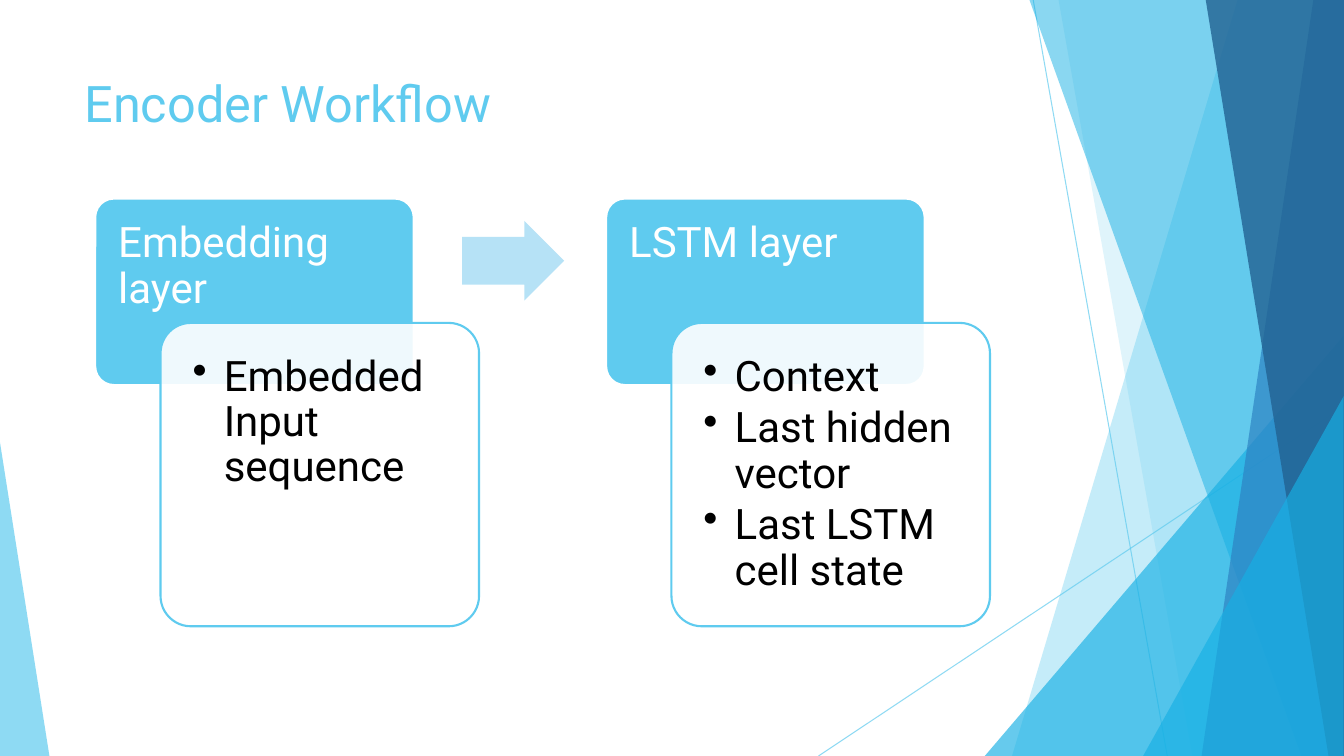
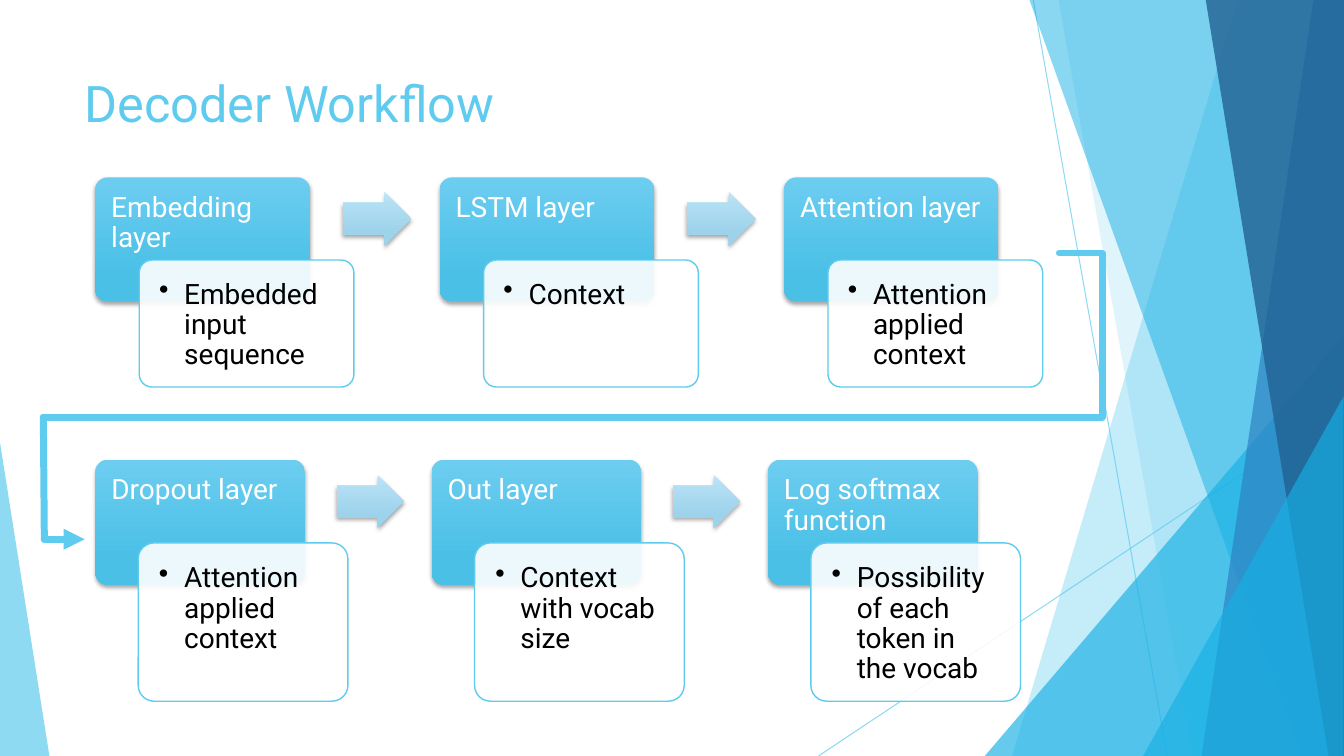
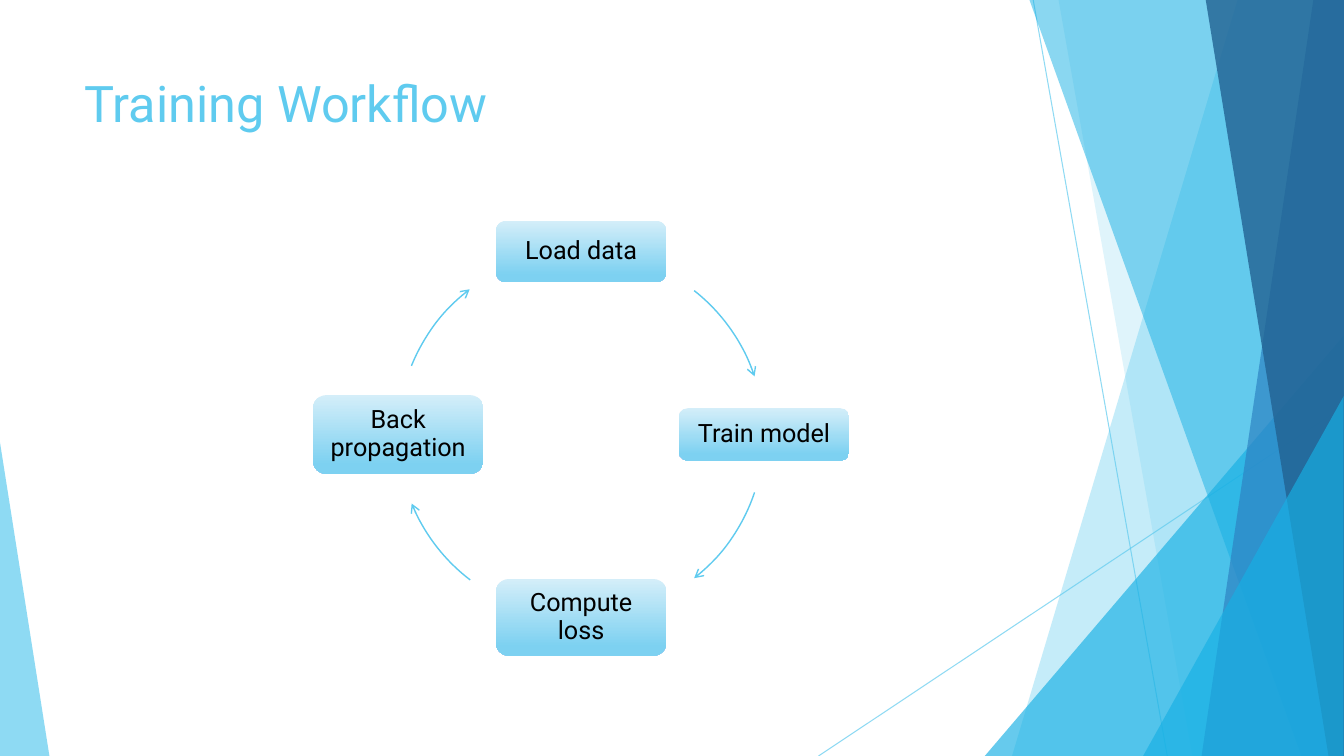
from dataclasses import dataclass
from math import cos, radians, sin

from lxml.etree import SubElement as Sub
from pptx import Presentation
from pptx.dml.color import RGBColor as Rgb
from pptx.enum.shapes import MSO_CONNECTOR as Link, MSO_SHAPE as Form
from pptx.enum.text import MSO_ANCHOR as Anchor, PP_ALIGN as Align
from pptx.oxml.ns import qn
from pptx.shapes.autoshape import Shape
from pptx.shapes.connector import Connector
from pptx.slide import Slide
from pptx.text.text import TextFrame
from pptx.util import Emu, Inches, Pt

CELL = Inches(0.1)
WIDE, HIGH = 133.33, 75
FONT = "Roboto"
HUES = {
    "sky": "5FCBEF", "cyan": "17B0E4", "blue": "2E83C3", "navy": "226292",
    "white": "FFFFFF", "black": "000000", "pale": "B6E2F6",
    "head top": "6CCDF0", "head low": "4BC0E6",
    "arrow top": "BAE3F6", "arrow low": "9DD2EB",
    "step top": "D4EEF9", "step low": "7DD1F1",
}


@dataclass
class Band:
    top: tuple[float, float]
    low: tuple[float, float]
    hue: str
    alpha: int


@dataclass
class Wedge:
    left: float
    top: float
    wide: float
    tip: int
    hue: str
    alpha: int


@dataclass
class Card:
    head: str
    items: list[str]


@dataclass
class Row:
    cards: list[Card]
    top: float
    wide: float
    head: float
    body: float
    size: int
    pad: float
    dent: float
    edge: float
    glossy: bool


@dataclass
class Step:
    text: str
    turn: int
    high: float
    start: float
    end: float


DECOR = [
    Band((122.8, WIDE), (100.4, WIDE), "sky", 36),
    Band((105, WIDE), (118.3, WIDE), "sky", 20),
    Wedge(97.7, 33.3, 35.6, 1, "cyan", 66),
    Band((102.1, WIDE), (129.1, WIDE), "cyan", 50),
    Band((130.3, WIDE), (119.2, WIDE), "blue", 70),
    Band((119.6, WIDE), (131.8, WIDE), "navy", 80),
    Wedge(113.4, 39.3, 19.9, 1, "cyan", 66),
    Wedge(0, 43.9, 4.9, 0, "sky", 70),
]
RAYS = [(102.5, 0, 115.8, HIGH), (WIDE, 40.3, 81.2, HIGH)]

ENCODER = [Row([
    Card("Embedding layer", ["Embedded Input sequence"]),
    Card("LSTM layer", ["Context", "Last hidden vector", "Last LSTM cell state"]),
], 19.7, 31.6, 18.5, 30.1, 30, 2.3, 3.1, 1.5, False)]
DECODER = [
    Row([
        Card("Embedding layer", ["Embedded input sequence"]),
        Card("LSTM layer", ["Context"]),
        Card("Attention layer", ["Attention applied context"]),
    ], 17.6, 21.3, 12.3, 12.6, 20, 1.6, 2.5, 1, True),
    Row([
        Card("Dropout layer", ["Attention applied context"]),
        Card("Out layer", ["Context with vocab size"]),
        Card("Log softmax function", ["Possibility of each token in the vocab"]),
    ], 45.6, 20.8, 12.4, 15.7, 20, 1.6, 2.5, 1, True),
]
STEPS = [
    Step("Load data", 270, 6.1, 308.2, 341.5),
    Step("Train model", 0, 5.2, 18.5, 51.8),
    Step("Compute loss", 90, 7.6, 127.3, 157.8),
    Step("Back propagation", 180, 7.8, 202, 232.5),
]


def cell(num: float) -> Emu:
    return Emu(round(num * CELL))


def tint(name: str) -> Rgb:
    return Rgb.from_string(HUES[name])


def fade(item: Shape | Connector, alpha: int) -> None:
    hue = next(item._element.spPr.iter(qn("a:srgbClr")))
    Sub(hue, qn("a:alpha"), val=str(alpha * 1000))


def point(item: Shape | Connector, kind: str) -> None:
    Sub(item._element.spPr.find(qn("a:ln")), qn("a:tailEnd"), type=kind)


def ink(item: Shape | Connector, width: float, hue: str = "sky") -> None:
    item.line.color.rgb = tint(hue)
    item.line.width = Pt(width)


def shape(slide: Slide, form: Form, left: float, top: float, wide: float,
          high: float, hue: str = "") -> Shape:
    item = slide.shapes.add_shape(form, cell(left), cell(top), cell(wide), cell(high))
    item.shadow.inherit = False
    item.line.fill.background()
    if hue:
        item.fill.solid()
        item.fill.fore_color.rgb = tint(hue)
    else:
        item.fill.background()
    return item


def blend(item: Shape, name: str, stop: float) -> None:
    item.fill.gradient()
    item.fill.gradient_angle = 270
    for mark, part, place in zip(item.fill.gradient_stops, ("top", "low"), (0, stop)):
        mark.color.rgb = tint(f"{name} {part}")
        mark.position = place


def gloss(item: Shape, name: str) -> None:
    blend(item, name, 0.78)
    cast = Sub(item._element.spPr.find(qn("a:effectLst")), qn("a:outerShdw"),
               blurRad=str(Pt(3)), dist=str(Pt(2)), dir="5400000", rotWithShape="0")
    hue = Sub(cast, qn("a:srgbClr"), val=HUES["black"])
    Sub(hue, qn("a:alpha"), val="35000")


def line(slide: Slide, kind: Link, x1: float, y1: float, x2: float, y2: float,
         width: float) -> Connector:
    item = slide.shapes.add_connector(kind, cell(x1), cell(y1), cell(x2), cell(y2))
    ink(item, width)
    Sub(item._element.spPr, qn("a:effectLst"))
    return item


def write(frame: TextFrame, texts: list[str], size: int, hue: str, pad: float,
          align: Align = Align.LEFT, anchor: Anchor = Anchor.TOP,
          dent: float = 0, space: float = 0.9) -> None:
    frame.word_wrap = True
    frame.vertical_anchor = anchor
    frame.margin_left = frame.margin_right = cell(pad)
    frame.margin_top = frame.margin_bottom = cell(pad)
    for num, text in enumerate(texts):
        para = frame.add_paragraph() if num else frame.paragraphs[0]
        para.text = text
        para.alignment = align
        if dent:
            props = para._p.get_or_add_pPr()
            props.set("marL", str(cell(dent)))
            props.set("indent", str(-cell(dent)))
            Sub(Sub(props, qn("a:buClr")), qn("a:srgbClr"), val=HUES[hue])
            Sub(props, qn("a:buChar"), char="•")
        para.line_spacing = space
        para.space_after = Pt(size * 0.15 if dent else 0)
        para.font.size = Pt(size)
        para.font.name = FONT
        para.font.color.rgb = tint(hue)


def band(slide: Slide, data: Band) -> Shape:
    (x1, x2), (x4, x3) = data.top, data.low
    pen = slide.shapes.build_freeform(cell(x1), cell(-0.1))
    pen.add_line_segments([(cell(x2), cell(-0.1)), (cell(x3), cell(HIGH)),
                           (cell(x4), cell(HIGH))], close=True)
    item = pen.convert_to_shape()
    item.shadow.inherit = False
    item.line.fill.background()
    item.fill.solid()
    item.fill.fore_color.rgb = tint(data.hue)
    return item


def wedge(slide: Slide, data: Wedge) -> Shape:
    item = shape(slide, Form.ISOSCELES_TRIANGLE, data.left, data.top, data.wide,
                 HIGH - data.top, data.hue)
    item.adjustments[0] = data.tip
    return item


def start(deck: Presentation, title: str) -> Slide:
    slide = deck.slides.add_slide(deck.slide_layouts[6])
    for ray in RAYS:
        fade(line(slide, Link.STRAIGHT, *ray, 0.75), 70)
    for data in DECOR:
        draw = band if isinstance(data, Band) else wedge
        fade(draw(slide, data), data.alpha)
    box = slide.shapes.add_textbox(cell(7.4), cell(6.7), cell(94), cell(14.4))
    write(box.text_frame, [title], 36, "sky", 1, space=1)
    box.text_frame.margin_top = box.text_frame.margin_bottom = cell(0.5)
    return slide


def flow(slide: Slide, row: Row) -> None:
    wide = row.wide
    for num, card in enumerate(row.cards):
        left = 9.45 + num * wide * 1.604
        head = shape(slide, Form.ROUNDED_RECTANGLE, left, row.top, wide, row.head, "sky")
        if row.glossy:
            gloss(head, "head")
        else:
            ink(head, row.edge, "white")
        head.adjustments[0] = 0.1
        write(head.text_frame, [card.head], row.size, "white", row.pad - row.head * 0.03)
        body = shape(slide, Form.ROUNDED_RECTANGLE, left + wide * 0.205,
                     row.top + row.head * 2 / 3, wide, row.body, "white")
        fade(body, 90)
        ink(body, row.edge)
        body.adjustments[0] = 0.1
        write(body.text_frame, card.items, row.size, "black", row.pad, dent=row.dent)
        if num < len(row.cards) - 1:
            high = wide * 0.25
            arrow = shape(slide, Form.RIGHT_ARROW, left + wide * 1.152,
                          row.top + row.head / 3 - high / 2, wide * 0.32, high, "pale")
            arrow.adjustments[0] = 0.6
            if row.glossy:
                gloss(arrow, "arrow")


def wrap(slide: Slide) -> None:
    bend = line(slide, Link.ELBOW, 4.3, 41.4, 105.1, 25.1, 5)
    props = bend._element.spPr
    props.find(qn("a:xfrm")).set("rot", "10800000")
    geom = props.find(qn("a:prstGeom"))
    guides = geom.find(qn("a:avLst"))
    if guides is None:
        guides = Sub(geom, qn("a:avLst"))
    Sub(guides, qn("a:gd"), name="adj1", fmla="val -4200")
    drop = line(slide, Link.STRAIGHT, 4.3, 41.4, 4.4, 53.5, 5)
    last = line(slide, Link.STRAIGHT, 4.4, 53.5, 8.4, 53.5, 5)
    for part in (bend, drop, last):
        part._element.spPr.find(qn("a:ln")).set("cap", "rnd")
    point(last, "triangle")


def cycle(slide: Slide, steps: list[Step]) -> None:
    midx, midy, reach, wide = 57.65, 43.1, 18.15, 16.9
    for step in steps:
        turn = radians(step.turn)
        box = shape(slide, Form.ROUNDED_RECTANGLE, midx + reach * cos(turn) - wide / 2,
                    midy + reach * sin(turn) - step.high / 2, wide, step.high, "sky")
        blend(box, "step", 0.88)
        write(box.text_frame, [step.text], 18, "black", 0.7, Align.CENTER, Anchor.MIDDLE)
        arc = shape(slide, Form.ARC, midx - reach, midy - reach, reach * 2, reach * 2)
        arc.adjustments[0] = step.start * 0.6
        arc.adjustments[1] = step.end * 0.6
        ink(arc, 1)
        point(arc, "arrow")


def main() -> None:
    deck = Presentation()
    deck.slide_width, deck.slide_height = cell(WIDE), cell(HIGH)
    for row in ENCODER:
        flow(start(deck, "Encoder Workflow") if row is ENCODER[0] else deck.slides[0], row)
    slide = start(deck, "Decoder Workflow")
    for row in DECODER:
        flow(slide, row)
    wrap(slide)
    cycle(start(deck, "Training Workflow"), STEPS)
    deck.save("out.pptx")


if __name__ == "__main__":
    main()
